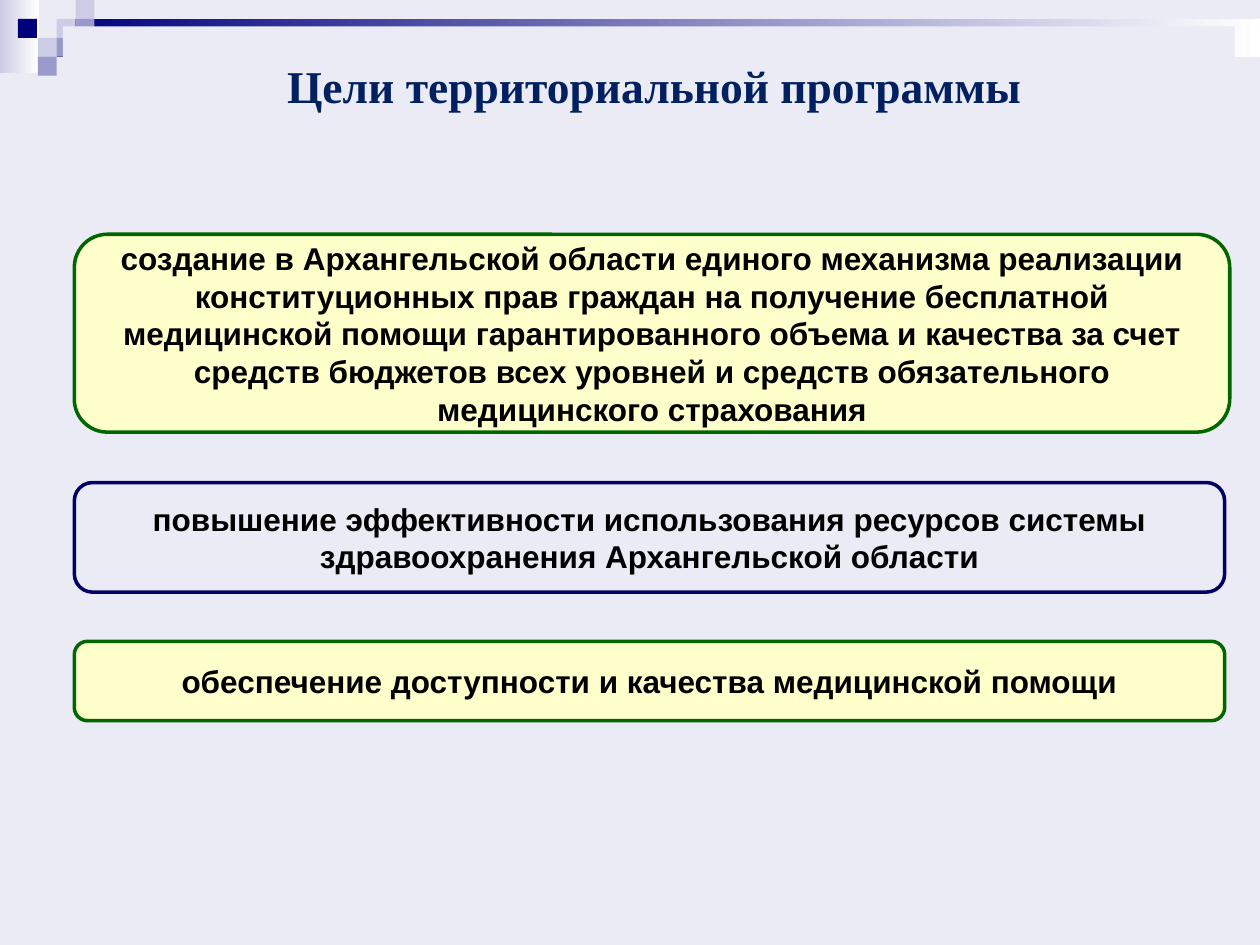
from pptx import Presentation
from pptx.dml.color import RGBColor
from pptx.enum.shapes import MSO_SHAPE as Shape
from pptx.enum.text import MSO_ANCHOR as Anchor, PP_ALIGN as Align
from pptx.util import Inches, Pt

PAPER, NAVY, LILAC, VIOLET = "EBEBF5", "00007D", "CCCCE6", "9999CC"
CREAM, GREEN, WHITE = "FFFFCC", "006600", "FFFFFF"

TITLE = " Цели территориальной программы"

# text, top, width, height, fill, line
GOALS = [
    ("создание в Архангельской области единого механизма реализации "
     "конституционных прав граждан на получение бесплатной медицинской "
     "помощи гарантированного объема и качества за счет средств бюджетов "
     "всех уровней и средств обязательного медицинского страхования",
     1.86, 9.17, 1.57, CREAM, GREEN),
    ("повышение эффективности использования ресурсов системы "
     "здравоохранения Архангельской области",
     3.83, 9.13, 0.87, PAPER, "000066"),
    ("обеспечение доступности и качества медицинской помощи",
     5.09, 9.13, 0.63, CREAM, GREEN),
]
GOAL_LEFT = 0.59

# box, start colour; each fades to white from left to right
FADES = [((0, 0, 0.31, 0.58), LILAC), ((0.45, 0.15, 9.55, 0.3), NAVY)]

# column, row, colour on a grid of small squares
TILE = 0.15
TILES = [(3, 1, LILAC), (4, 0, LILAC), (4, 1, VIOLET), (2, 2, LILAC),
         (0.95, 1, NAVY), (3, 2, VIOLET), (2, 3, VIOLET)]


def rgb(code):
    return RGBColor.from_string(code)


def add_box(slide, box, fill=None, line=None, kind=Shape.RECTANGLE):
    shape = slide.shapes.add_shape(kind, *map(Inches, box))
    shape.shadow.inherit = False
    if fill:
        shape.fill.solid()
        shape.fill.fore_color.rgb = rgb(fill)
    if line:
        shape.line.color.rgb = rgb(line)
        shape.line.width = Pt(2)
    else:
        shape.line.fill.background()
    return shape


def add_fade(slide, box, start):
    fill = add_box(slide, box).fill
    fill.gradient()
    fill.gradient_angle = 0
    for stop, code, place in zip(fill.gradient_stops, (start, WHITE), (0, 1)):
        stop.color.rgb = rgb(code)
        stop.position = place


def write(shape, text, size, face, color):
    frame = shape.text_frame
    frame.word_wrap = True
    frame.vertical_anchor = Anchor.MIDDLE
    para = frame.paragraphs[0]
    para.alignment = Align.CENTER
    run = para.add_run()
    run.text = text
    font = run.font
    font.size, font.name, font.bold = Pt(size), face, True
    font.color.rgb = rgb(color)


def main():
    deck = Presentation()
    deck.slide_width, deck.slide_height = Inches(10), Inches(7.5)
    slide = deck.slides.add_slide(deck.slide_layouts[6])
    slide.background.fill.solid()
    slide.background.fill.fore_color.rgb = rgb(PAPER)

    for box, start in FADES:
        add_fade(slide, box, start)
    for col, row, color in TILES:
        add_box(slide, (col * TILE, row * TILE, TILE, TILE), color)

    title = add_box(slide, (0.5, 0.21, 9.3, 0.94), PAPER)
    write(title, TITLE, 26, "Times New Roman", "002060")

    for text, top, width, height, fill, line in GOALS:
        goal = add_box(slide, (GOAL_LEFT, top, width, height), fill, line,
                       Shape.ROUNDED_RECTANGLE)
        write(goal, text, 18, "Arial", "000000")

    deck.save("out.pptx")


if __name__ == "__main__":
    main()
